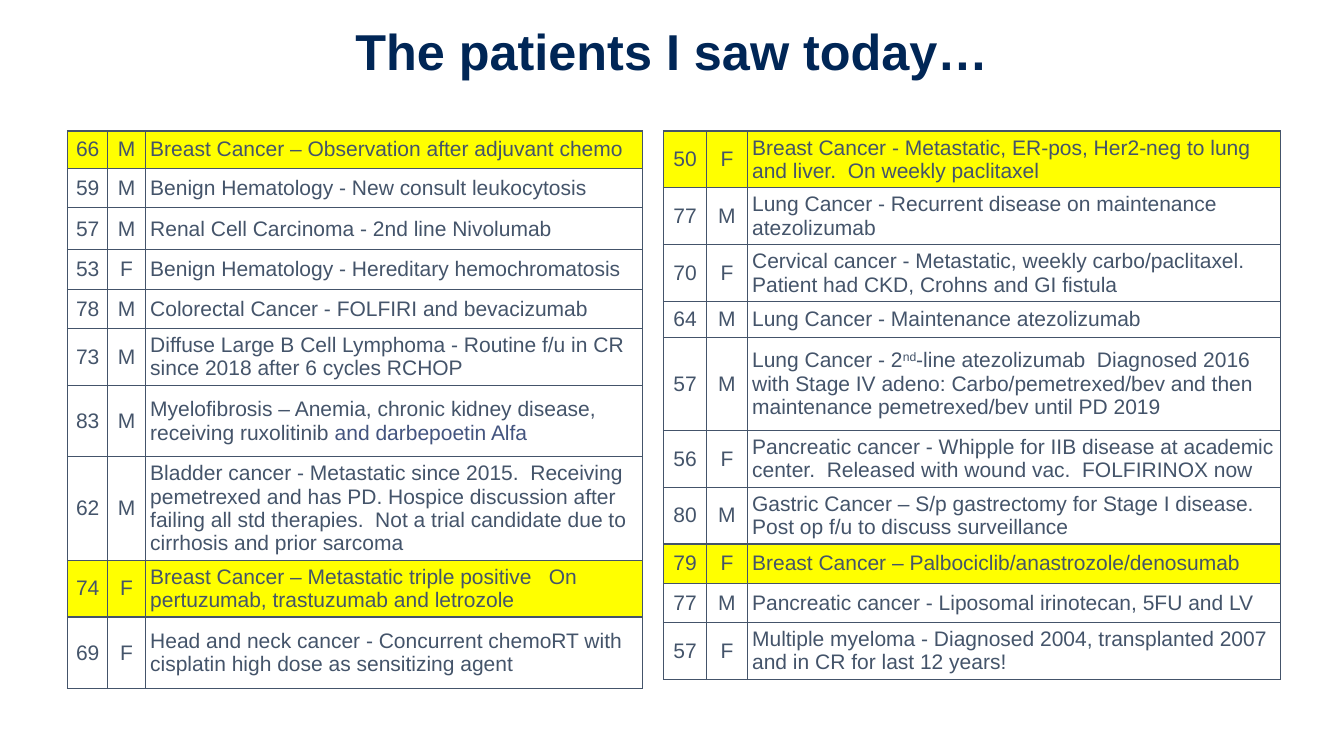
from lxml.etree import SubElement
from pptx import Presentation
from pptx.dml.color import RGBColor
from pptx.enum.text import MSO_ANCHOR as ANCHOR, PP_ALIGN as ALIGN
from pptx.oxml.ns import qn
from pptx.util import Pt

PX = 9144  # 100 px to the inch
THEME = {
    "font": "Arial", "title_size": 36, "cell_size": 15,
    "title": "002656", "text": "44546A", "accent": "43547F",
    "border": "44546A", "plain": "FFFFFF", "highlight": "FFFF00",
}
INSET = 5

# Each row: height, age, sex, runs of the note as (text, kind)
TABLES = [
    {"left": 67, "top": 130, "cols": [40, 37, 493], "rows": [
        (37, "66", "M", [("Breast Cancer – Observation after adjuvant chemo", "")]),
        (39, "59", "M", [("Benign Hematology - New consult leukocytosis", "")]),
        (42, "57", "M", [("Renal Cell Carcinoma - 2nd line Nivolumab", "")]),
        (39, "53", "F", [("Benign Hematology - Hereditary hemochromatosis", "")]),
        (39, "78", "M", [("Colorectal Cancer - FOLFIRI and bevacizumab", "")]),
        (50, "73", "M", [("Diffuse Large B Cell Lymphoma - Routine f/u in CR "
                          "since 2018 after 6 cycles RCHOP", "")]),
        (71, "83", "M", [("Myelofibrosis – Anemia, chronic kidney disease, "
                          "receiving ruxolitinib ", ""),
                         ("and darbepoetin Alfa", "accent")]),
        (92, "62", "M", [("Bladder cancer - Metastatic since 2015.  Receiving "
                          "pemetrexed and has PD. Hospice discussion after "
                          "failing all std therapies.  Not a trial candidate due to "
                          "cirrhosis and prior sarcoma", "")]),
        (50, "74", "F", [("Breast Cancer – Metastatic triple positive   On "
                          "pertuzumab, trastuzumab and letrozole", "")]),
        (71, "69", "F", [("Head and neck cancer - Concurrent chemoRT with "
                          "cisplatin high dose as sensitizing agent", "")]),
    ]},
    {"left": 658, "top": 130, "cols": [43, 40, 529], "rows": [
        (50, "50", "F", [("Breast Cancer - Metastatic, ER-pos, Her2-neg to lung "
                          "and liver.  On weekly paclitaxel", "")]),
        (50, "77", "M", [("Lung Cancer - Recurrent disease on maintenance "
                          "atezolizumab", "")]),
        (50, "70", "F", [("Cervical cancer - Metastatic, weekly carbo/paclitaxel.  "
                          "Patient had CKD, Crohns and GI fistula", "")]),
        (36, "64", "M", [("Lung Cancer - Maintenance atezolizumab", "")]),
        (92, "57", "M", [("Lung Cancer - 2", ""), ("nd", "superscript"),
                         ("-line atezolizumab  Diagnosed 2016 with Stage IV adeno: "
                          "Carbo/pemetrexed/bev and then "
                          "maintenance pemetrexed/bev until PD 2019", "")]),
        (50, "56", "F", [("Pancreatic cancer - Whipple for IIB disease at academic "
                          "center.  Released with wound vac.  FOLFIRINOX now", "")]),
        (50, "80", "M", [("Gastric Cancer – S/p gastrectomy for Stage I disease.  "
                          "Post op f/u to discuss surveillance", "")]),
        (39, "79", "F", [("Breast Cancer – Palbociclib/anastrozole/denosumab", "")]),
        (39, "77", "M", [("Pancreatic cancer - Liposomal irinotecan, 5FU and LV", "")]),
        (50, "57", "F", [("Multiple myeloma - Diagnosed 2004, transplanted 2007 "
                          "and in CR for last 12 years!", "")]),
    ]},
]


def add_color(parent, tag, color):
    """Append a colour-holding element such as a:solidFill or a:highlight."""
    SubElement(SubElement(parent, qn(tag)), qn("a:srgbClr"), val=color)


def fill_cell(cell, runs, align, marked):
    """Write the runs into a bordered cell, yellow when marked."""
    tc_pr = cell._tc.get_or_add_tcPr()
    for side in ("a:lnL", "a:lnR", "a:lnT", "a:lnB"):
        add_color(SubElement(tc_pr, qn(side), w=str(Pt(1))), "a:solidFill", THEME["border"])
    cell.fill.solid()
    cell.fill.fore_color.rgb = RGBColor.from_string(THEME["highlight" if marked else "plain"])
    cell.vertical_anchor = ANCHOR.MIDDLE
    for side in ("left", "right", "top", "bottom"):
        setattr(cell, f"margin_{side}", INSET * PX)
    p = cell.text_frame.paragraphs[0]
    p.alignment = align
    for text, kind in runs:
        r = p.add_run()
        r.text = text
        r.font.size = Pt(THEME["cell_size"])
        r.font.color.rgb = RGBColor.from_string(THEME["accent" if kind == "accent" else "text"])
        r_pr = r.font._element
        if marked:
            add_color(r_pr, "a:highlight", THEME["highlight"])
        if kind == "superscript":
            r_pr.set("baseline", "30000")
        r.font.name = THEME["font"]


prs = Presentation()
prs.slide_width, prs.slide_height = 1333 * PX, 750 * PX
s = prs.slides.add_slide(prs.slide_layouts[5])

title = s.shapes.title
title.left, title.top, title.width, title.height = 100 * PX, 0, 1133 * PX, 108 * PX
tf = title.text_frame
tf.text = "The patients I saw today…"
tf.vertical_anchor = ANCHOR.MIDDLE
p = tf.paragraphs[0]
p.alignment, p.line_spacing = ALIGN.CENTER, 0.9
font = p.runs[0].font
for name, value in {"name": THEME["font"], "size": Pt(THEME["title_size"]), "bold": True}.items():
    setattr(font, name, value)
font.color.rgb = RGBColor.from_string(THEME["title"])

for spec_table in TABLES:
    cols, rows = spec_table["cols"], spec_table["rows"]
    frame = s.shapes.add_table(
        len(rows), len(cols), spec_table["left"] * PX, spec_table["top"] * PX,
        sum(cols) * PX, sum(row[0] for row in rows) * PX)
    table = frame.table
    table.first_row = table.horz_banding = False
    for column, width in zip(table.columns, cols):
        column.width = width * PX
    for i, (height, age, sex, note) in enumerate(rows):
        table.rows[i].height = height * PX
        marked = note[0][0].startswith("Breast Cancer")
        fill_cell(table.cell(i, 0), [(age, "")], ALIGN.CENTER, marked)
        fill_cell(table.cell(i, 1), [(sex, "")], ALIGN.CENTER, marked)
        fill_cell(table.cell(i, 2), note, ALIGN.LEFT, marked)

prs.save("out.pptx")
